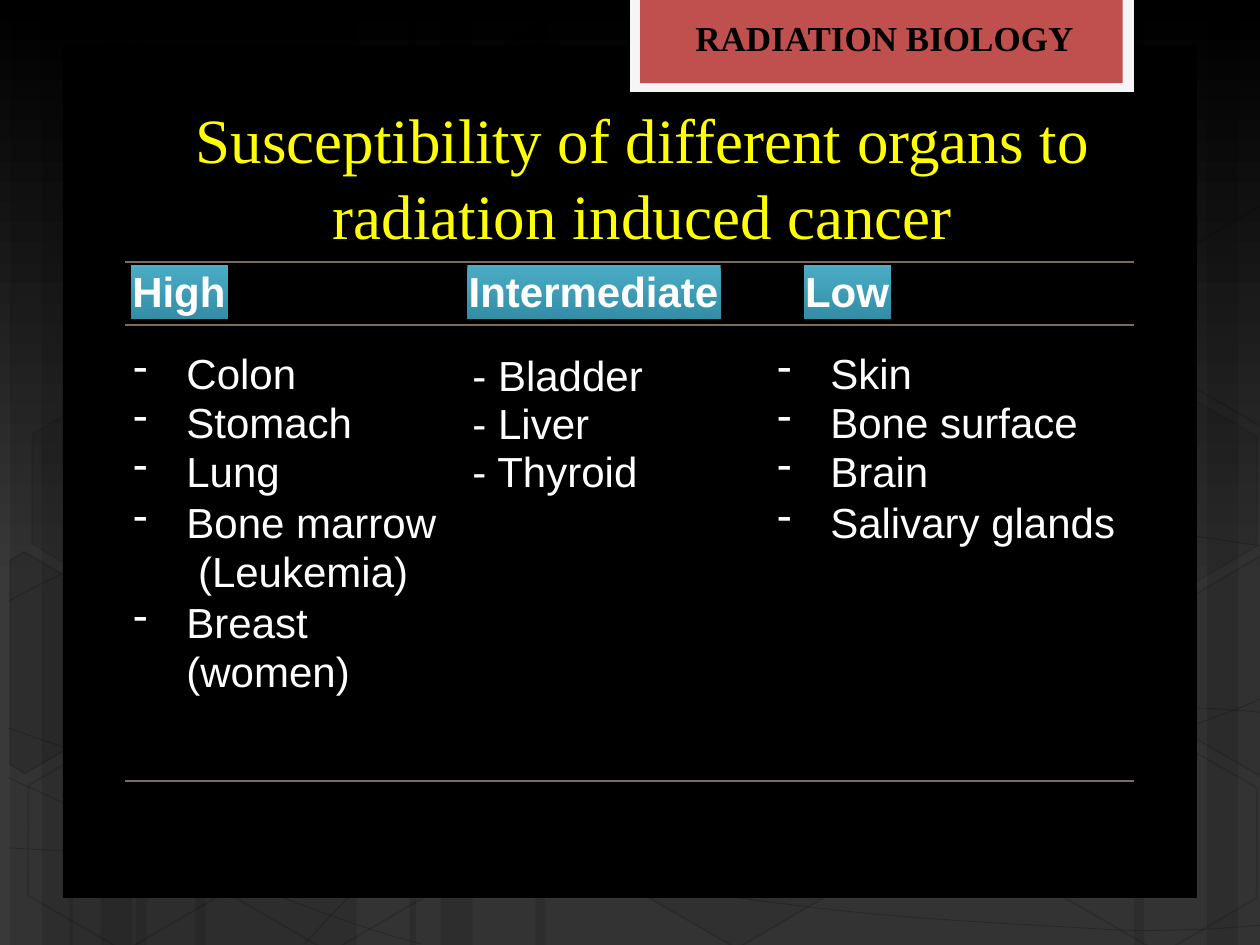
from dataclasses import dataclass

from lxml.etree import SubElement
from pptx import Presentation
from pptx.dml.color import RGBColor
from pptx.enum.shapes import MSO_CONNECTOR, MSO_SHAPE
from pptx.enum.text import MSO_ANCHOR, MSO_AUTO_SIZE, PP_ALIGN
from pptx.oxml.ns import qn
from pptx.util import Inches, Pt


@dataclass(frozen=True)
class Theme:
    black: str = "000000"
    white: str = "FFFFFF"
    gray: str = "393939"
    tag_frame: str = "F5F5F5"
    tag: str = "C0504D"
    label_top: str = "4BACC6"
    label_bottom: str = "328EA7"
    title: str = "FFFF00"
    rule: str = "7A6A60"
    sans: str = "Arial"
    serif: str = "Times New Roman"
    title_size: int = 36
    body_size: int = 24
    tag_size: int = 20


THEME = Theme()

# Background decoration: left and width of each full-height stripe
STRIPES = [(1.08, 1.75), (0.08, 0.5), (0.33, 0.83), (1.55, 1.75), (0.55, 0.5), (0.8, 0.83),
           (7.33, 1.75), (9.58, 0.5), (9, 0.83), (4.25, 3.08), (3.25, 0.5), (3.5, 0.83)]

# Start point, then two control points and an end point for each curve segment
CURVES = [
    [(0.07, 6.73), (0.61, 6.76), (1.15, 6.79), (1.9, 6.78), (2.65, 6.77), (3.58, 6.75),
     (4.58, 6.65), (5.58, 6.55), (7, 6.36), (7.92, 6.17), (8.83, 5.98), (9.77, 5.68),
     (10.07, 5.51)],
    [(0.07, 4.77), (0.36, 4.61), (0.65, 4.46), (1.21, 4.31), (1.78, 4.16), (2.59, 3.94),
     (3.47, 3.87), (4.36, 3.8), (5.44, 3.79), (6.54, 3.87), (7.64, 3.95), (9.47, 4.26),
     (10.07, 4.34)],
    [(0.06, 6.17), (1.27, 6.72), (2.47, 7.27), (3.34, 7.49)],
    [(0.07, 5.78), (0.38, 5.89), (0.7, 6), (1.28, 6.16), (1.86, 6.31), (2.73, 6.56),
     (3.57, 6.73), (4.4, 6.9), (5.45, 7.08), (6.28, 7.18), (7.11, 7.29), (8, 7.33),
     (8.53, 7.36), (9.05, 7.4), (9.19, 7.38), (9.45, 7.38), (9.71, 7.37), (9.89, 7.35),
     (10.07, 7.34)],
    [(2.42, 7.49), (2.6, 7.29), (2.78, 7.09), (3.02, 6.91), (3.26, 6.73), (3.6, 6.53),
     (3.88, 6.39), (4.16, 6.25), (4.33, 6.19), (4.7, 6.09), (5.06, 5.99), (5.73, 5.85),
     (6.08, 5.78), (6.44, 5.71), (6.49, 5.71), (6.8, 5.69), (7.11, 5.66), (7.6, 5.63),
     (7.94, 5.62), (8.29, 5.61), (8.86, 5.62), (8.86, 5.62), (8.86, 5.62), (9.53, 5.62),
     (9.53, 5.62), (9.71, 5.63), (9.88, 5.64), (9.97, 5.65), (10.06, 5.66), (10.03, 5.65),
     (10.06, 5.66)],
]

# Left, top, fill opacity and line opacity in percent
HEXAGONS = [(3.34, 0.36, 4, 8), (4.97, 5.89, 6, 12), (0.11, 5.91, None, 12),
            (0.14, 3.12, 7, 8), (1.74, 5.92, None, 12), (7.53, 4.53, 10, 12),
            (8.34, 5.93, None, 12), (8.34, 3.14, 7, 8)]

# Hexagons cut off by the slide edge: fill opacity and corners
CUT_HEXAGONS = [
    (10, [(0.08, 4.45), (0.19, 4.38), (0.96, 4.82), (0.95, 5.7), (0.2, 6.14), (0.08, 6.07)]),
    (4, [(9.26, 4.85), (10.01, 4.41), (10.09, 4.46), (10.09, 6.13), (10.02, 6.17), (9.26, 5.73)]),
    (None, [(9.26, 2.07), (10.01, 1.63), (10.1, 1.68), (10.09, 3.35), (10.02, 3.39), (9.26, 2.95)]),
]


def rgb(color):
    return RGBColor.from_string(color)


def set_opacity(paint, percent):
    SubElement(paint.find(".//" + qn("a:srgbClr")), qn("a:alpha"), val=str(percent * 1000))


def style(shape, fill=None, fill_opacity=None, line=None, width=1, line_opacity=None):
    shape.shadow.inherit = False
    properties = shape._element.spPr
    if fill:
        shape.fill.solid()
        shape.fill.fore_color.rgb = rgb(fill)
        if fill_opacity:
            set_opacity(properties.find(qn("a:solidFill")), fill_opacity)
    else:
        shape.fill.background()
    if line:
        shape.line.color.rgb = rgb(line)
        shape.line.width = Pt(width)
        if line_opacity:
            set_opacity(properties.find(qn("a:ln")), line_opacity)
    else:
        shape.line.fill.background()


def fade_down(fill, top, bottom, end=1):
    fill.gradient()
    fill.gradient_angle = 270
    for stop, color, position in zip(fill.gradient_stops, (top, bottom), (0, end)):
        stop.color.rgb = rgb(color)
        stop.position = position


def add_block(page, place, kind=MSO_SHAPE.RECTANGLE, **look):
    shape = page.shapes.add_shape(kind, *map(Inches, place))
    style(shape, **look)
    return shape


def add_outline(page, points, close=False, **look):
    corners = [(Inches(x), Inches(y)) for x, y in points]
    builder = page.shapes.build_freeform(*corners[0])
    builder.add_line_segments(corners[1:], close=close)
    shape = builder.convert_to_shape()
    style(shape, **look)
    return shape


def add_curve(page, points):
    shape = add_outline(page, points, line=THEME.black, width=0.5, line_opacity=20)
    # Every three straight segments become one Bezier segment
    steps = list(shape._element.iter(qn("a:lnTo")))
    route = steps[0].getparent()
    for start in range(0, len(steps), 3):
        bezier = SubElement(route, qn("a:cubicBezTo"))
        for step in steps[start:start + 3]:
            bezier.append(step[0])
            route.remove(step)


def add_bullet(para):
    properties = para._p.get_or_add_pPr()
    properties.set("marL", str(Inches(0.42)))
    properties.set("indent", str(-Inches(0.42)))
    SubElement(properties, qn("a:buChar"), char="-")


def write(box, lines, size, font, color, bold=False, align=PP_ALIGN.LEFT, insets=(0, 0.01),
          anchor=MSO_ANCHOR.TOP, spacing=None, bullets=False, gap_from=None):
    frame = box.text_frame
    frame.word_wrap = True
    frame.auto_size = MSO_AUTO_SIZE.SHAPE_TO_FIT_TEXT
    frame.vertical_anchor = anchor
    frame.margin_left, frame.margin_top = map(Inches, insets)
    frame.margin_right = frame.margin_bottom = 0
    for index, line in enumerate(lines):
        para = frame.paragraphs[0] if index == 0 else frame.add_paragraph()
        para.text = line
        para.alignment = align
        if spacing:
            para.line_spacing = Pt(spacing)
        if gap_from and index >= gap_from:
            para.space_before = Pt(1.2)
        if bullets:
            add_bullet(para)
        for span in para.runs:
            span.font.size, span.font.name, span.font.bold = Pt(size), font, bold
            span.font.color.rgb = rgb(color)


def add_text(page, place, lines, *args, **options):
    write(page.shapes.add_textbox(*map(Inches, place)), lines, *args, **options)


def add_label(page, left, width, text):
    label = add_block(page, (left, 2.1, width, 0.43))
    fade_down(label.fill, THEME.label_top, THEME.label_bottom)
    write(label, [text], THEME.body_size, THEME.sans, THEME.white, bold=True, insets=(0.01, 0.01))


def add_rule(page, y):
    rule = page.shapes.add_connector(MSO_CONNECTOR.STRAIGHT, *map(Inches, (0.99, y, 9, y)))
    rule.line.color.rgb = rgb(THEME.rule)
    rule.line.width = Pt(1)
    SubElement(rule._element.spPr, qn("a:effectLst"))


def add_backdrop(page):
    fade_down(page.background.fill, THEME.black, THEME.gray, end=0.62)
    for left, width in STRIPES:
        add_block(page, (left, 0, width, 7.5), fill=THEME.black, fill_opacity=10)
    for points in CURVES:
        add_curve(page, points)
    for left, top, opacity, line_opacity in HEXAGONS:
        hexagon = add_block(page, (left, top, 1.75, 1.52), MSO_SHAPE.HEXAGON,
                            fill=opacity and THEME.black, fill_opacity=opacity,
                            line=THEME.black, line_opacity=line_opacity)
        hexagon.adjustments[0] = 0.285
        hexagon.rotation = 30
    for opacity, corners in CUT_HEXAGONS:
        add_outline(page, corners, close=True, fill=opacity and THEME.black,
                    fill_opacity=opacity, line=THEME.black, line_opacity=12)


def main():
    deck = Presentation()
    deck.slide_width, deck.slide_height = Inches(10), Inches(7.5)
    page = deck.slides.add_slide(deck.slide_layouts[6])
    add_backdrop(page)

    # Content panel and corner tag
    add_block(page, (0.5, 0.36, 9, 6.76), fill=THEME.black, line=THEME.black, width=0.5)
    add_block(page, (4.99, -0.02, 4.02, 0.76), fill=THEME.tag_frame, line=THEME.black, width=1.25)
    add_block(page, (5.08, -0.02, 3.83, 0.68), fill=THEME.tag)

    # Risk levels and their organs
    for left, width, level in [(1.04, 0.77, "High"), (3.71, 2.01, "Intermediate"),
                               (6.38, 0.69, "Low")]:
        add_label(page, left, width, level)
    body = (THEME.body_size, THEME.sans, THEME.white)
    high = ["Colon", "Stomach", "Lung", "Bone marrow\v (Leukemia)", "Breast (women)"]
    low = ["Skin", "Bone surface", "Brain", "Salivary glands"]
    add_text(page, (1.06, 2.76, 2.47, 3.2), high, *body, spacing=28, bullets=True, gap_from=3)
    add_text(page, (3.75, 2.76, 2.1, 1.17), ["- Bladder", "- Liver", "- Thyroid"], *body,
             insets=(0, 0.04), spacing=27.2)
    add_text(page, (6.17, 2.76, 3.67, 1.6), low, *body, spacing=28, bullets=True, gap_from=3)
    for y in (2.08, 2.58, 6.2):
        add_rule(page, y)

    # Title and tag text
    add_text(page, (0.67, 0.77, 8.86, 1.23),
             ["Susceptibility of different organs to radiation induced cancer"],
             THEME.title_size, THEME.serif, THEME.title, align=PP_ALIGN.CENTER,
             anchor=MSO_ANCHOR.BOTTOM)
    add_text(page, (5.42, 0.08, 3.58, 0.44), ["RADIATION BIOLOGY"], THEME.tag_size,
             THEME.serif, THEME.black, bold=True, insets=(0.1, 0.05))
    deck.save("out.pptx")


if __name__ == "__main__":
    main()
